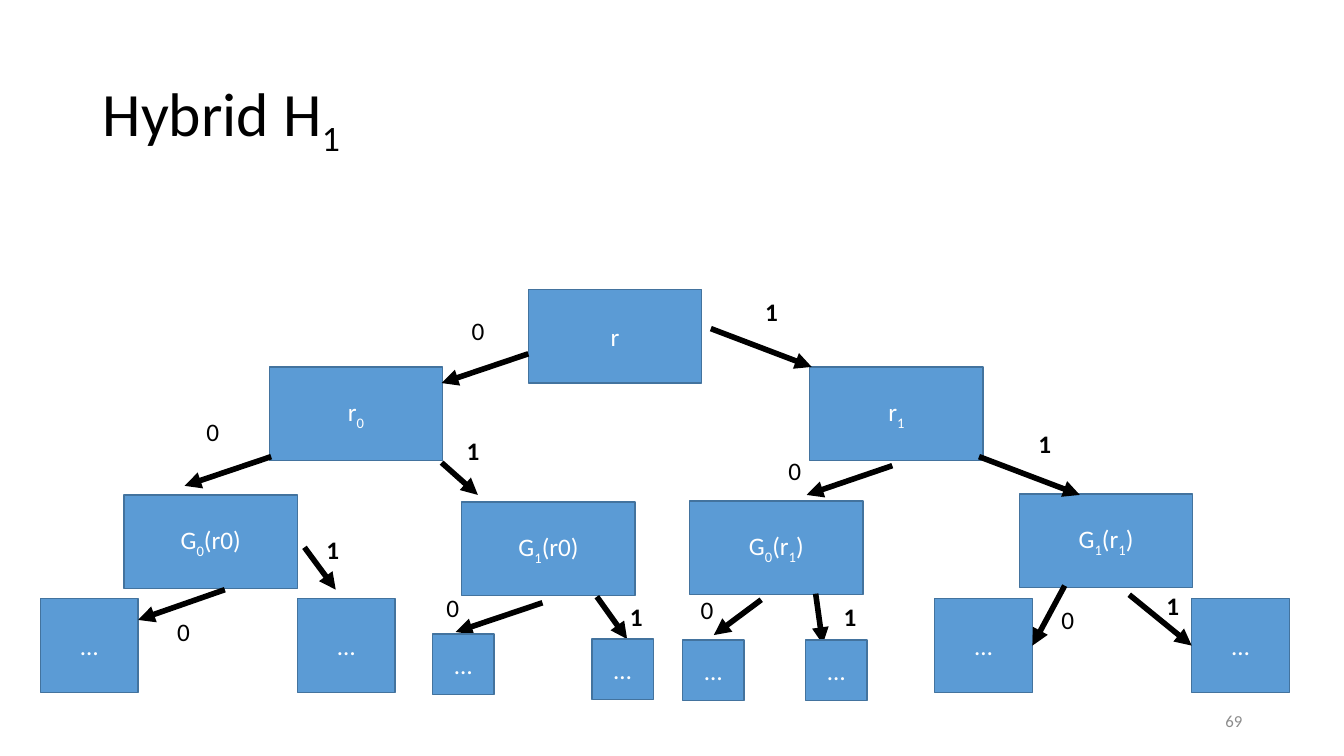
import pptx
import pptx.util
import pptx.dml.color
import pptx.enum.shapes
import pptx.enum.text
import pptx.oxml

Inches, Pt = pptx.util.Inches, pptx.util.Pt
ALIGN = pptx.enum.text.PP_ALIGN
ANCHOR = pptx.enum.text.MSO_ANCHOR

BLACK, WHITE, GREY = "000000", "FFFFFF", "8C8C8C"
BLUE, EDGE = "5B9BD5", "43739E"

# An underscore lowers the one character after it.
TITLE = "Hybrid H_1"
PAGE = "69"

# kind of box: (width, height)
SIZES = {"node": (1.72, 0.93), "leaf": (0.97, 0.93), "small": (0.61, 0.6)}

# name: (kind, left, top, text)
TREE = {
    "root": ("node", 5.24, 2.87, "r"),
    "0": ("node", 2.67, 3.64, "r_0"),
    "1": ("node", 8.03, 3.64, "r_1"),
    "00": ("node", 1.23, 4.91, "G_0(r0)"),
    "01": ("node", 4.58, 4.98, "G_1(r0)"),
    "10": ("node", 6.84, 4.97, "G_0(r_1)"),
    "11": ("node", 10.11, 4.9, "G_1(r_1)"),
    "000": ("leaf", 0.4, 5.94, "…"),
    "001": ("leaf", 2.95, 5.94, "…"),
    "110": ("leaf", 9.27, 5.94, "…"),
    "111": ("leaf", 11.82, 5.94, "…"),
}
TWIGS = {
    "010": ("small", 4.29, 6.29, "…"),
    "011": ("small", 5.87, 6.34, "…"),
    "100": ("small", 6.77, 6.35, "…"),
    "101": ("small", 7.99, 6.35, "…"),
}

# (x, y) of the tail, (x, y) of the head, joined box and its side
ARROWS = [
    ((5.24, 3.51), (4.38, 3.8), None),
    ((7.05, 3.26), (8.05, 3.64), None),
    ((2.69, 4.53), (1.83, 4.82), None),
    ((4.38, 4.59), (4.74, 4.91), None),
    ((8.85, 4.62), (8.0, 4.91), None),
    ((9.71, 4.53), (10.71, 4.91), None),
    ((2.23, 5.85), (1.37, 6.15), None),
    ((3.02, 5.43), (3.33, 5.85), None),
    ((5.38, 5.98), (4.52, 6.27), None),
    ((5.92, 5.92), (6.22, 6.34), None),
    ((7.55, 5.95), (7.08, 6.3), None),
    ((8.09, 5.89), (8.16, 6.39), None),
    ((10.56, 5.81), (10.24, 6.41), ("110", 3)),
    ((11.2, 5.9), (11.82, 6.41), ("111", 1)),
]

# bit on the branch: left and top of each label
BITS = {
    "0": [(4.58, 3.08), (1.95, 4.08), (7.72, 4.47), (1.66, 6.07),
          (4.33, 5.83), (6.85, 5.85), (10.43, 5.95)],
    "1": [(7.49, 2.89), (4.53, 4.27), (10.2, 4.2), (3.14, 5.25),
          (6.15, 5.92), (8.27, 5.92), (11.47, 5.81)],
}


def color(code):
    return pptx.dml.color.RGBColor.from_string(code)


def apply(thing, style):
    for key, value in style.items():
        setattr(thing, key, value)


def write(shape, text, size, code, bold=False, para=None, frame=None):
    """Fill a shape with text, lowering each character after an underscore."""
    apply(shape.text_frame, {"word_wrap": True, **(frame or {})})
    line = shape.text_frame.paragraphs[0]
    apply(line, para or {})
    first, *rest = text.split("_")
    runs = [(first, False)]
    for part in rest:
        runs += [(part[0], True), (part[1:], False)]
    for words, low in runs:
        if not words:
            continue
        run = line.add_run()
        run.text = words
        apply(run.font, {"name": "Calibri", "size": Pt(size), "bold": bold})
        run.font.color.rgb = color(code)
        if low:
            run._r.get_or_add_rPr().set("baseline", "-25000")


def add_text(slide, area, *args, **style):
    write(slide.shapes.add_textbox(*map(Inches, area)), *args, **style)


def add_box(slide, kind, left, top, text):
    area = map(Inches, (left, top, *SIZES[kind]))
    box = slide.shapes.add_shape(pptx.enum.shapes.MSO_SHAPE.RECTANGLE, *area)
    box.shadow.inherit = False
    box.fill.solid()
    box.fill.fore_color.rgb = color(BLUE)
    box.line.color.rgb = color(EDGE)
    box.line.width = Pt(1)
    write(box, text, 18, WHITE, para={"alignment": ALIGN.CENTER},
          frame={"vertical_anchor": ANCHOR.MIDDLE})
    return box


def add_arrow(slide, tail, head, joint, boxes):
    link = slide.shapes.add_connector(
        pptx.enum.shapes.MSO_CONNECTOR.STRAIGHT, *map(Inches, tail + head))
    if joint:
        name, side = joint
        link.end_connect(boxes[name], side)
    link.line.color.rgb = color(BLACK)
    link.line.width = Pt(4)
    space = pptx.oxml.ns.nsdecls("a")
    link.line._get_or_add_ln().append(
        pptx.oxml.parse_xml(f'<a:tailEnd {space} type="triangle"/>'))
    link._element.spPr.append(pptx.oxml.parse_xml(f"<a:effectLst {space}/>"))


def main():
    deck = pptx.Presentation()
    apply(deck, {"slide_width": Inches(13.33), "slide_height": Inches(7.5)})
    slide = deck.slides.add_slide(deck.slide_layouts[6])

    middle = {"vertical_anchor": ANCHOR.MIDDLE}
    add_text(slide, (0.92, 0.4, 11.5, 1.45), TITLE, 44, BLACK,
             para={"line_spacing": 0.9}, frame=middle)
    add_text(slide, (9.42, 6.95, 3, 0.4), PAGE, 12, GREY,
             para={"alignment": ALIGN.RIGHT}, frame=middle)

    boxes = {name: add_box(slide, *spec) for name, spec in TREE.items()}
    for tail, head, joint in ARROWS:
        add_arrow(slide, tail, head, joint, boxes)
    for twig in TWIGS.values():
        add_box(slide, *twig)
    for bit, spots in BITS.items():
        for spot in spots:
            add_text(slide, (*spot, 0.33, 0.4), bit, 18, BLACK,
                     bold=bit == "1", frame={"word_wrap": False})

    deck.save("out.pptx")


if __name__ == "__main__":
    main()
